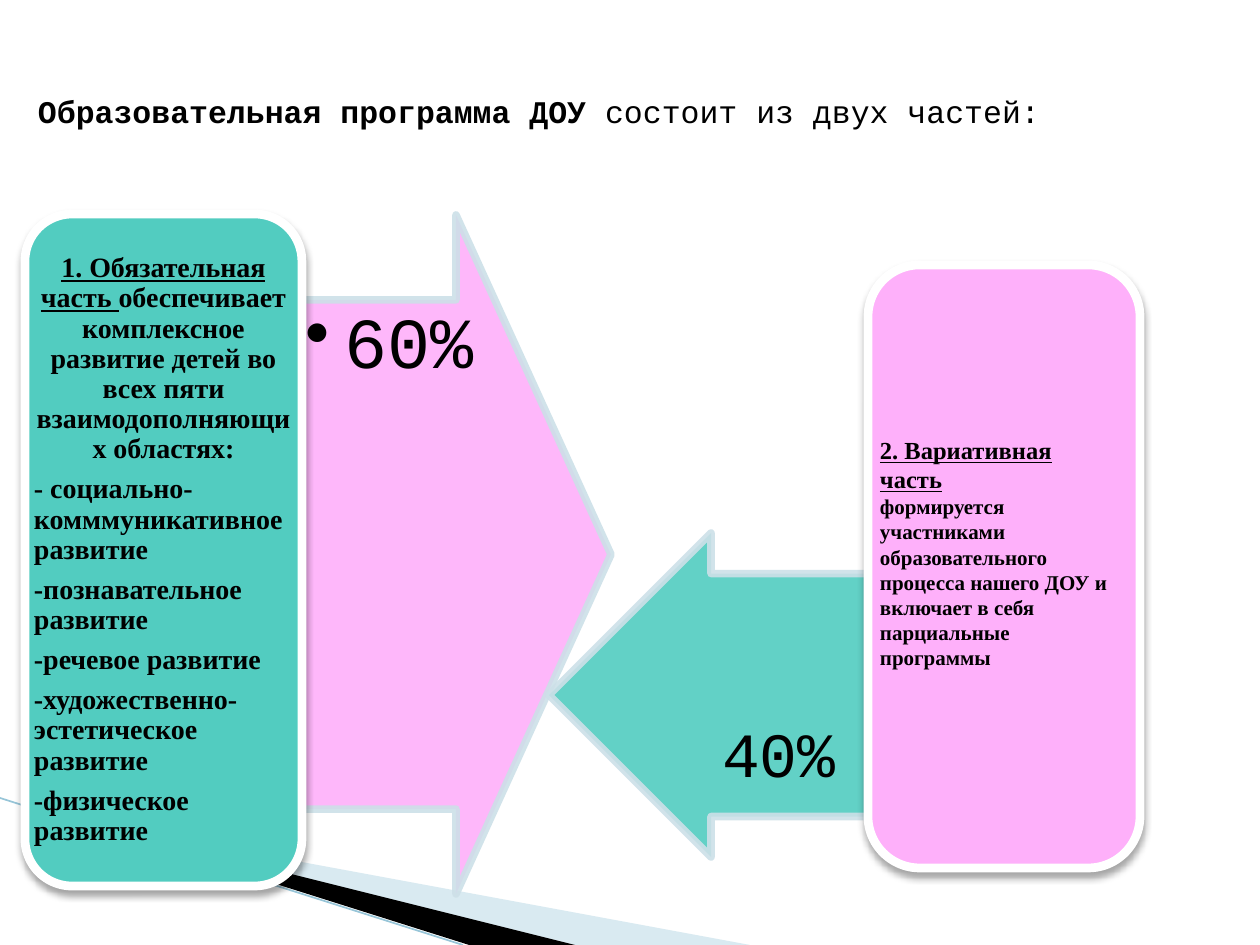
import pptx
import pptx.util
import pptx.dml.color
import pptx.enum.shapes
import pptx.enum.text
import pptx.oxml
import pptx.oxml.ns

KIND = pptx.enum.shapes.MSO_SHAPE
ALIGN = pptx.enum.text.PP_ALIGN
ANCHOR = pptx.enum.text.MSO_ANCHOR
FIT = pptx.enum.text.MSO_AUTO_SIZE
Pt = pptx.util.Pt
UNIT = 914400 / 126  # EMU in one px

THEME = {
    "teal": "52CCC0", "pink": "FEB0FA", "edge": "CDE0E8", "white": "FFFFFF",
    "black": "000000", "sky": "A0CBDC", "wire": "97C5D8",
    "mono": "Courier New", "serif": "Times New Roman",
    "title": 18, "share": 41, "part": 36, "list": 16, "head": 14, "note": 12,
}

# Content: paragraphs hold runs of (text, format)
TITLE = [[("Образовательная программа ДОУ ", {"bold": True}),
          ("состоит из двух частей:", {"bold": False})]]
BOLD = {"bold": True, "underline": False}
LINED = {"bold": True, "underline": True}
AREAS = ["- социально-комммуникативное развитие", "-познавательное развитие",
         "-речевое развитие", "-художественно-эстетическое развитие",
         "-физическое развитие"]
MAIN = [[("1. Обязательная часть ", LINED),
         ("обеспечивает комплексное развитие детей во всех пяти "
          "взаимодополняющих областях:", BOLD)]]
MAIN += [[(area, BOLD)] for area in AREAS]
EXTRA = [[("2. Вариативная часть", LINED)],
         [("формируется участниками образовательного процесса нашего ДОУ "
           "и включает в себя парциальные программы", BOLD)]]

# Places in px: left, top, width, height
WEDGES = [
    ("sky", 40, [(69, 819), (750, 945), (575, 945)]),
    ("black", 100, [(67, 818), (575, 945), (469, 945)]),
]
WIRE = (0, 798, 463, 945)
ARROWS = [("pink", (301, 215, 310, 679), 0), ("teal", (549, 533, 334, 324), 180)]
CARDS = [("teal", (25, 214, 277, 672), 0.17), ("pink", (868, 265, 272, 603), 0.19)]


def px(*vals):
    return [round(v * UNIT) for v in vals]


def color(name):
    return pptx.dml.color.RGBColor.from_string(THEME[name])


def put(item, vals):
    for key, val in vals.items():
        setattr(item, key, val)


def fade(fill, share):
    tone = fill._xPr.find(".//" + pptx.oxml.ns.qn("a:srgbClr"))
    pptx.oxml.ns.qn("a:alpha")
    tone.append(xml(f'<a:alpha {NS} val="{share * 1000}"/>'))


NS = pptx.oxml.ns.nsdecls("a")
xml = pptx.oxml.parse_xml


def paint(shape, name, share=100, edge=None, width=0):
    shape.shadow.inherit = False
    shape.fill.solid()
    shape.fill.fore_color.rgb = color(name)
    if share < 100:
        fade(shape.fill, share)
    if edge:
        shape.line.color.rgb = color(edge)
        shape.line.width = Pt(width)
        if share < 100:
            fade(shape.line.fill, share)
    else:
        shape.line.fill.background()


def write(shape, box, paras, font, sizes, pads=(13, 6), bullet=None,
          anchor=ANCHOR.TOP, form=None):
    put(shape, dict(zip(("left", "top", "width", "height"), px(*box))))
    frame = shape.text_frame
    side, end = px(*pads)
    put(frame, {"word_wrap": True, "auto_size": FIT.NONE,
                "vertical_anchor": anchor, "margin_left": side,
                "margin_right": side, "margin_top": end, "margin_bottom": end})
    for i, runs in enumerate(paras):
        para = frame.paragraphs[0] if i == 0 else frame.add_paragraph()
        put(para, {"alignment": ALIGN.LEFT, "space_before": Pt(0), **(form or {})})
        props = para._p.get_or_add_pPr()
        hang = px(39)[0] if bullet else 0
        props.set("marL", str(hang))
        props.set("indent", str(-hang))
        props.append(xml(f'<a:buChar {NS} char="{bullet}"/>' if bullet
                         else f"<a:buNone {NS}/>"))
        size = sizes[min(i, len(sizes) - 1)]
        for text, look in runs:
            run = para.add_run()
            run.text = text
            put(run.font, {"name": THEME[font], "size": Pt(THEME[size]), **look})
            run.font.color.rgb = color("black")


deck = pptx.Presentation()
deck.slide_width, deck.slide_height = px(1260, 945)
slide = deck.slides.add_slide(deck.slide_layouts[1])
shapes = slide.shapes
title, body = slide.placeholders

# Corner wedges and thin line
for name, share, dots in WEDGES:
    pen = shapes.build_freeform(*dots[0], scale=UNIT)
    pen.add_line_segments(dots[1:], close=True)
    paint(pen.convert_to_shape(), name, share)
wire = shapes.add_connector(pptx.enum.shapes.MSO_CONNECTOR.STRAIGHT, *px(*WIRE))
wire.line.color.rgb = color("wire")
wire.line.width = Pt(0.95)
wire._element.spPr.append(xml(f"<a:effectLst {NS}/>"))

# Arrows, then cards with soft shadows
for name, box, turn in ARROWS:
    arrow = shapes.add_shape(KIND.RIGHT_ARROW, *px(*box))
    arrow.adjustments[0] = 0.75
    arrow.rotation = turn
    paint(arrow, name, 90, "edge", 4.33)
for name, box, curve in CARDS:
    card = shapes.add_shape(KIND.ROUNDED_RECTANGLE, *px(*box))
    card.adjustments[0] = curve
    paint(card, name, 100, "white", 5)
    glow = card._element.spPr.find(pptx.oxml.ns.qn("a:effectLst"))
    glow.append(xml(
        f'<a:outerShdw {NS} blurRad="{Pt(4)}" dist="{Pt(3)}" dir="5400000" '
        'rotWithShape="0"><a:srgbClr val="000000"><a:alpha val="35000"/>'
        "</a:srgbClr></a:outerShdw>"))

# Text on top
write(title, (25, 26, 1191, 195 - 26), TITLE, "mono", ["title"], anchor=ANCHOR.MIDDLE)
shapes._spTree.append(body._element)
write(body, CARDS[0][1], MAIN, "serif", ["list"], (9, 4), anchor=ANCHOR.MIDDLE,
      form={"line_spacing": 0.9, "space_after": Pt(5.6)})
body.text_frame.paragraphs[0].alignment = ALIGN.CENTER
LABELS = [
    ((301, 303, 310, 90), [[("60%", {})]], "mono", ["share"], (4, 4), "•",
     ANCHOR.TOP, {"line_spacing": 0.9}),
    ((709, 709, 209, 89), [[("40%", {})]], "mono", ["part"]),
    ((867, 429, 254, 254), EXTRA, "serif", ["head", "note"]),
]
for label in LABELS:
    write(shapes.add_textbox(0, 0, 0, 0), *label)

deck.save("out.pptx")
